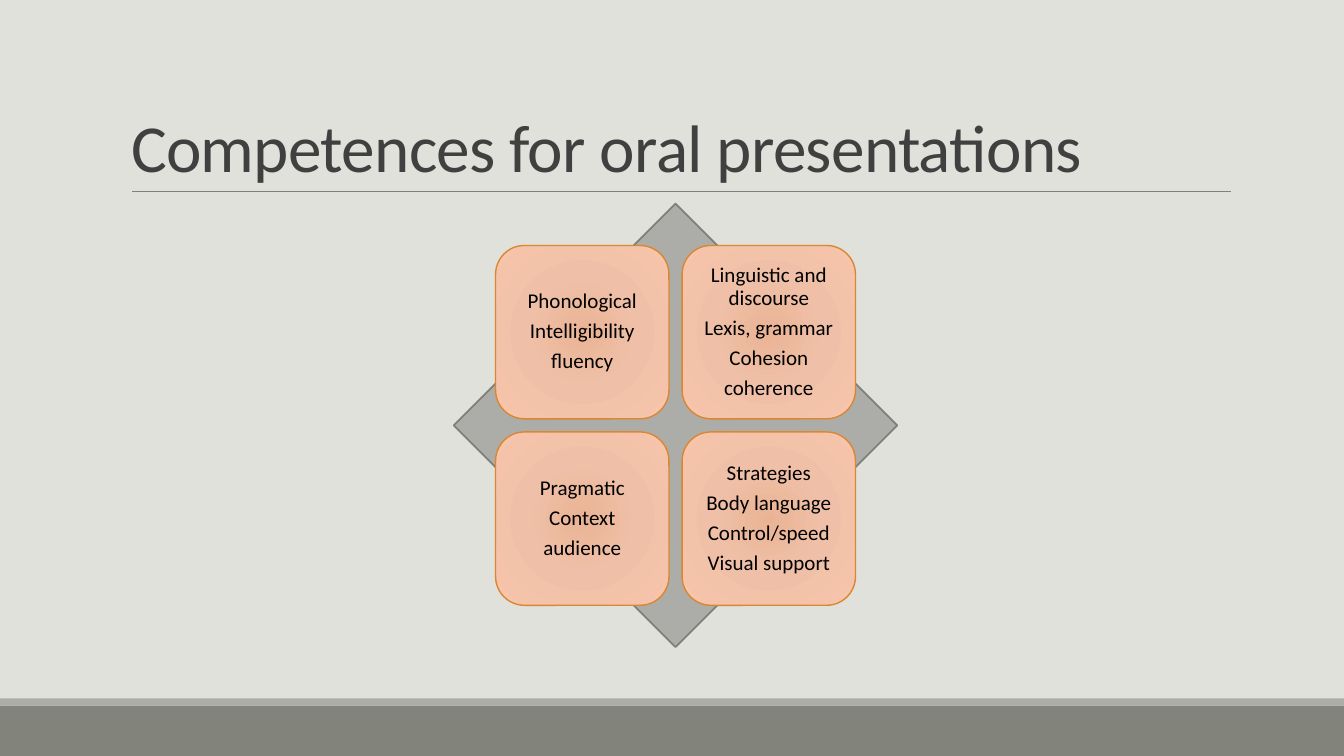
import pptx
import pptx.util
import pptx.oxml
import pptx.oxml.ns
import pptx.dml.color
import pptx.enum.shapes
import pptx.enum.text

Inches = pptx.util.Inches
Pt = pptx.util.Pt
Shape = pptx.enum.shapes.MSO_SHAPE
Align = pptx.enum.text.PP_ALIGN
Anchor = pptx.enum.text.MSO_ANCHOR

FONT = "Calibri"
COLORS = {
    "back": "E1E1DB", "base": "82847C", "band": "ACADA8", "rule": "808080",
    "title": "404040", "edge": "7F807C", "card": "DB8631", "text": "000000",
}
STOPS = ((0, "EAB395"), (45, "EFC0A7"), (100, "F7C5AC"))
CARDS = (
    ("Phonological", "Intelligibility", "fluency"),
    ("Linguistic and discourse", "Lexis, grammar", "Cohesion", "coherence"),
    ("Pragmatic", "Context", "audience"),
    ("Strategies", "Body language", "Control/speed", "Visual support"),
)


def color(name):
    return pptx.dml.color.RGBColor.from_string(COLORS[name])


def add_run(para, text, size, name):
    run = para.add_run()
    run.text = text
    run.font.name = FONT
    run.font.size = Pt(size)
    run.font.color.rgb = color(name)
    return run


def add_form(shapes, kind, box, edge=None, width=0):
    form = shapes.add_shape(kind, *map(Inches, box))
    form.shadow.inherit = False
    if edge:
        form.line.color.rgb = color(edge)
        form.line.width = Pt(width)
    else:
        form.line.fill.background()
    return form


def fill_solid(form, name):
    form.fill.solid()
    form.fill.fore_color.rgb = color(name)


def fill_glow(form):
    stops = "".join(
        f'<a:gs pos="{pos * 1000}"><a:srgbClr val="{tint}"/></a:gs>' for pos, tint in STOPS)
    glow = pptx.oxml.parse_xml(
        f'<a:gradFill {pptx.oxml.ns.nsdecls("a")} rotWithShape="1"><a:gsLst>{stops}</a:gsLst>'
        '<a:path path="circle"><a:fillToRect l="100000" t="100000" r="100000" b="100000"/>'
        '</a:path></a:gradFill>')
    form._element.spPr.insert(2, glow)


def add_footer(slide, box):
    left, top, width, height = box
    strip = 0.07
    base = add_form(slide.shapes, Shape.RECTANGLE, (left, top + strip, width, height - strip))
    fill_solid(base, "base")
    band = add_form(slide.shapes, Shape.RECTANGLE, (left, top, width, strip))
    fill_solid(band, "band")


def add_title(slide, box):
    left, top, width, height = box
    title = slide.shapes.title
    title.left, title.top, title.width, title.height = map(Inches, box)
    frame = title.text_frame
    frame.word_wrap = True
    frame.auto_size = pptx.enum.text.MSO_AUTO_SIZE.NONE
    frame.vertical_anchor = Anchor.BOTTOM
    para = frame.paragraphs[0]
    para.alignment = Align.LEFT
    para.line_spacing = 0.85
    run = add_run(para, "Competences for oral presentations", 48, "title")
    run.font._element.set("spc", "-50")
    rule = slide.shapes.add_connector(
        pptx.enum.shapes.MSO_CONNECTOR.STRAIGHT,
        *map(Inches, (left + 0.11, top + height, left + width + 0.01, top + height)))
    rule.line.color.rgb = color("rule")
    rule.line.width = Pt(0.5)
    rule._element.spPr.append(
        pptx.oxml.parse_xml(f'<a:effectLst {pptx.oxml.ns.nsdecls("a")}/>'))


def add_card(shapes, box, lines):
    card = add_form(shapes, Shape.ROUNDED_RECTANGLE, box, "card", 1)
    fill_glow(card)
    frame = card.text_frame
    frame.word_wrap = True
    frame.vertical_anchor = Anchor.MIDDLE
    frame.margin_left = frame.margin_right = Inches(0.06)
    frame.margin_top = frame.margin_bottom = Inches(0.06)
    for index, line in enumerate(lines):
        para = frame.add_paragraph() if index else frame.paragraphs[0]
        para.alignment = Align.CENTER
        para.line_spacing = 0.9
        para.space_after = Pt(5.25)
        add_run(para, line, 15, "text")


def add_matrix(slide, box):
    left, top, width, height = box
    shapes = slide.shapes.add_group_shape().shapes
    fill_solid(add_form(shapes, Shape.DIAMOND, box, "edge", 1.25), "band")
    side, gap = 1.72, 0.13
    inset = (width - 2 * side - gap) / 2
    for index, lines in enumerate(CARDS):
        row, col = divmod(index, 2)
        spot = (left + inset + col * (side + gap), top + inset + row * (side + gap))
        add_card(shapes, (*spot, side, side), lines)


def main():
    deck = pptx.Presentation()
    deck.slide_width = Inches(13.33)
    deck.slide_height = Inches(7.5)
    slide = deck.slides.add_slide(deck.slide_layouts[5])
    slide.background.fill.solid()
    slide.background.fill.fore_color.rgb = color("back")
    add_footer(slide, (0, 6.93, 13.33, 0.57))
    add_title(slide, (1.2, 0.31, 11, 1.59))
    add_matrix(slide, (4.5, 2.02, 4.4, 4.4))
    deck.save("out.pptx")


if __name__ == "__main__":
    main()
